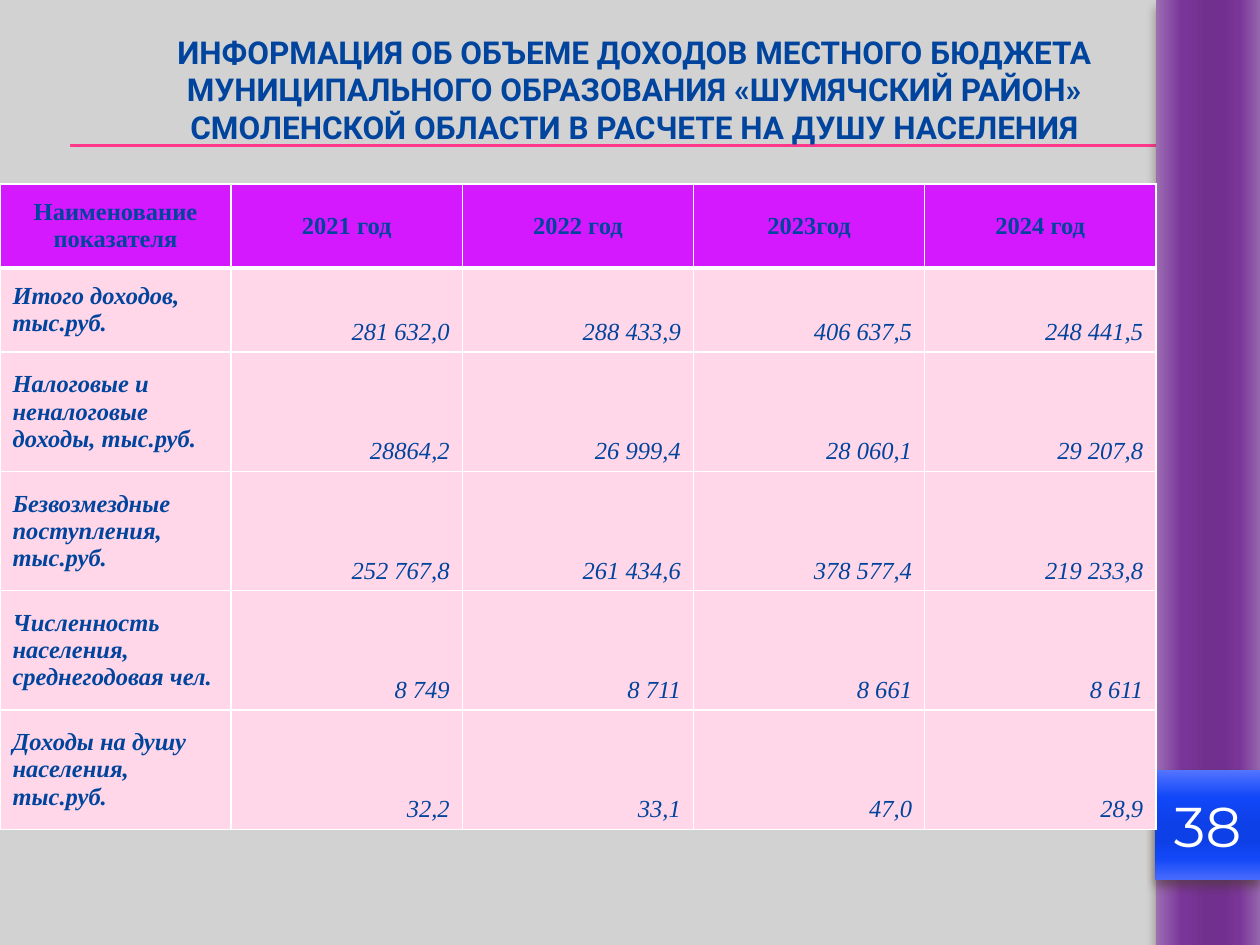
from dataclasses import dataclass, field
from typing import Any

from lxml import etree
from pptx import Presentation
from pptx import util as u
from pptx.dml.color import RGBColor
from pptx.enum import shapes, text
from pptx.oxml import ns

PURPLE = [(0, "9C6FB3"), (25, "7A3599"), (50, "71308E"), (65, "71308E"), (80, "7A3598"), (100, "9566AD")]
BLUE = [(0, "5374FF"), (25, "1147F8"), (50, "0E40E7"), (65, "0E40E7"), (80, "1147F6"), (100, "476AFD")]
HEADER = ["Наименование показателя", "2021 год", "2022 год", "2023год", "2024 год"]
ROWS = [
    ["Итого доходов, тыс.руб.", "281 632,0", "288 433,9", "406 637,5", "248 441,5"],
    ["Налоговые и неналоговые доходы, тыс.руб.", "28864,2", "26 999,4", "28 060,1", "29 207,8"],
    ["Безвозмездные поступления, тыс.руб.", "252 767,8", "261 434,6", "378 577,4", "219 233,8"],
    ["Численность населения, среднегодовая чел.", "8 749", "8 711", "8 661", "8 611"],
    ["Доходы на душу населения, тыс.руб.", "32,2", "33,1", "47,0", "28,9"],
]
TITLE = (
    "ИНФОРМАЦИЯ ОБ ОБЪЕМЕ ДОХОДОВ МЕСТНОГО БЮДЖЕТА МУНИЦИПАЛЬНОГО ОБРАЗОВАНИЯ "
    "«ШУМЯЧСКИЙ РАЙОН» СМОЛЕНСКОЙ ОБЛАСТИ В РАСЧЕТЕ НА ДУШУ НАСЕЛЕНИЯ"
)


def color(value):
    return RGBColor.from_string(value)


def add_element(parent, tag, **attributes):
    return etree.SubElement(parent, ns.qn(tag), attributes)


@dataclass
class SlideBuilder:
    """Draws styled elements on the current slide."""

    slide: Any
    ink: str = "00449E"
    accent: str = "FF388C"
    header_fill: str = "D519FF"
    body_fill: str = "FFD7E8"
    border: str = "FFFFFF"
    cell_font: dict = field(default_factory=lambda: {"name": "Times New Roman", "size": u.Pt(14)})

    def background(self, value):
        fill = self.slide.background.fill
        fill.solid()
        fill.fore_color.rgb = color(value)

    def add_text(self, frame, words, align, ink, **font):
        paragraph = frame.paragraphs[0]
        paragraph.alignment = align
        run = paragraph.add_run()
        run.text = words
        for name, value in font.items():
            setattr(run.font, name, value)
        run.font.color.rgb = color(ink)

    def rule(self, left, right, top):
        line = self.slide.shapes.add_connector(
            shapes.MSO_CONNECTOR.STRAIGHT, u.Pt(left), u.Pt(top), u.Pt(right), u.Pt(top))
        line.line.color.rgb = color(self.accent)
        line.line.width = u.Pt(0.75)
        add_element(line._element.spPr, "a:effectLst")

    def panel(self, left, top, width, height, stops, rotation=0):
        shape = self.slide.shapes.add_shape(
            shapes.MSO_SHAPE.RECTANGLE, u.Pt(left), u.Pt(top), u.Pt(width), u.Pt(height))
        shape.rotation = rotation
        shape.line.fill.background()
        shape.fill.gradient()
        shape.fill.gradient_angle = 270
        properties = shape._element.spPr
        stop_list = properties.find(".//" + ns.qn("a:gsLst"))
        for stop in list(stop_list):
            stop_list.remove(stop)
        for position, value in stops:
            stop = add_element(stop_list, "a:gs", pos=str(position * 1000))
            add_element(stop, "a:srgbClr", val=value)
        shape.shadow.inherit = False
        shadow = add_element(
            properties.find(ns.qn("a:effectLst")), "a:outerShdw",
            blurRad=str(u.Pt(6)), dist=str(u.Pt(4)), dir="5400000", rotWithShape="0")
        add_element(add_element(shadow, "a:srgbClr", val="4E3B30"), "a:alpha", val="60000")
        return shape

    def page_number(self, number, *box):
        frame = self.panel(*box, BLUE).text_frame
        frame.word_wrap = False
        frame.vertical_anchor = text.MSO_ANCHOR.MIDDLE
        self.add_text(frame, number, text.PP_ALIGN.CENTER, "FFFFFF", name="Montserrat", size=u.Pt(32))

    def title(self, words, left, top, width, height):
        box = self.slide.shapes.add_textbox(u.Pt(left), u.Pt(top), u.Pt(width), u.Pt(height))
        box.text_frame.word_wrap = True
        box.text_frame.auto_size = text.MSO_AUTO_SIZE.SHAPE_TO_FIT_TEXT
        self.add_text(box.text_frame, words, text.PP_ALIGN.CENTER, self.ink,
                      name="Roboto", size=u.Pt(18), bold=True)

    def cell(self, cell, words, fill, align, anchor, top, bottom, **font):
        cell.vertical_anchor = anchor
        self.add_text(cell.text_frame, words, align, self.ink, **self.cell_font, **font)
        properties = cell._tc.get_or_add_tcPr()
        for side, width in {"L": 1, "R": 1, "T": top, "B": bottom}.items():
            line = add_element(properties, f"a:ln{side}", w=str(u.Pt(width)))
            add_element(add_element(line, "a:solidFill"), "a:srgbClr", val=self.border)
        cell.fill.solid()
        cell.fill.fore_color.rgb = color(fill)

    def table(self, header, rows, left, top, column_width, row_heights):
        table = self.slide.shapes.add_table(
            len(row_heights), len(header), u.Pt(left), u.Pt(top),
            u.Pt(column_width * len(header)), u.Pt(sum(row_heights))).table
        for column in table.columns:
            column.width = u.Pt(column_width)
        for row, height in zip(table.rows, row_heights):
            row.height = u.Pt(height)
        middle, bottom = text.MSO_ANCHOR.MIDDLE, text.MSO_ANCHOR.BOTTOM
        for column, words in enumerate(header):
            self.cell(table.cell(0, column), words, self.header_fill,
                      text.PP_ALIGN.CENTER, middle, 1, 3, bold=True)
        for index, (label, *values) in enumerate(rows, 1):
            edge = 3 if index == 1 else 1
            self.cell(table.cell(index, 0), label, self.body_fill,
                      text.PP_ALIGN.LEFT, middle, edge, 1, bold=True, italic=True)
            for column, value in enumerate(values, 1):
                self.cell(table.cell(index, column), value, self.body_fill,
                          text.PP_ALIGN.RIGHT, bottom, edge, 1, bold=False, italic=True)


def main():
    presentation = Presentation()
    presentation.slide_width, presentation.slide_height = u.Pt(720), u.Pt(540)
    builder = SlideBuilder(presentation.slides.add_slide(presentation.slide_layouts[6]))
    builder.background("D2D2D2")
    for top in (82.8, 83.5):
        builder.rule(40.3, 720, top)
    builder.panel(420.25, 240.25, 540, 59.5, PURPLE, rotation=270)
    builder.page_number("38", 660.25, 440, 59.75, 62.5)
    builder.title(TITLE, 70.6, 15.1, 583.9, 72.7)
    builder.table(HEADER, ROWS, 0, 105.2, 132.1, [48] * 2 + [68.2] * 4)
    presentation.save("out.pptx")


if __name__ == "__main__":
    main()
